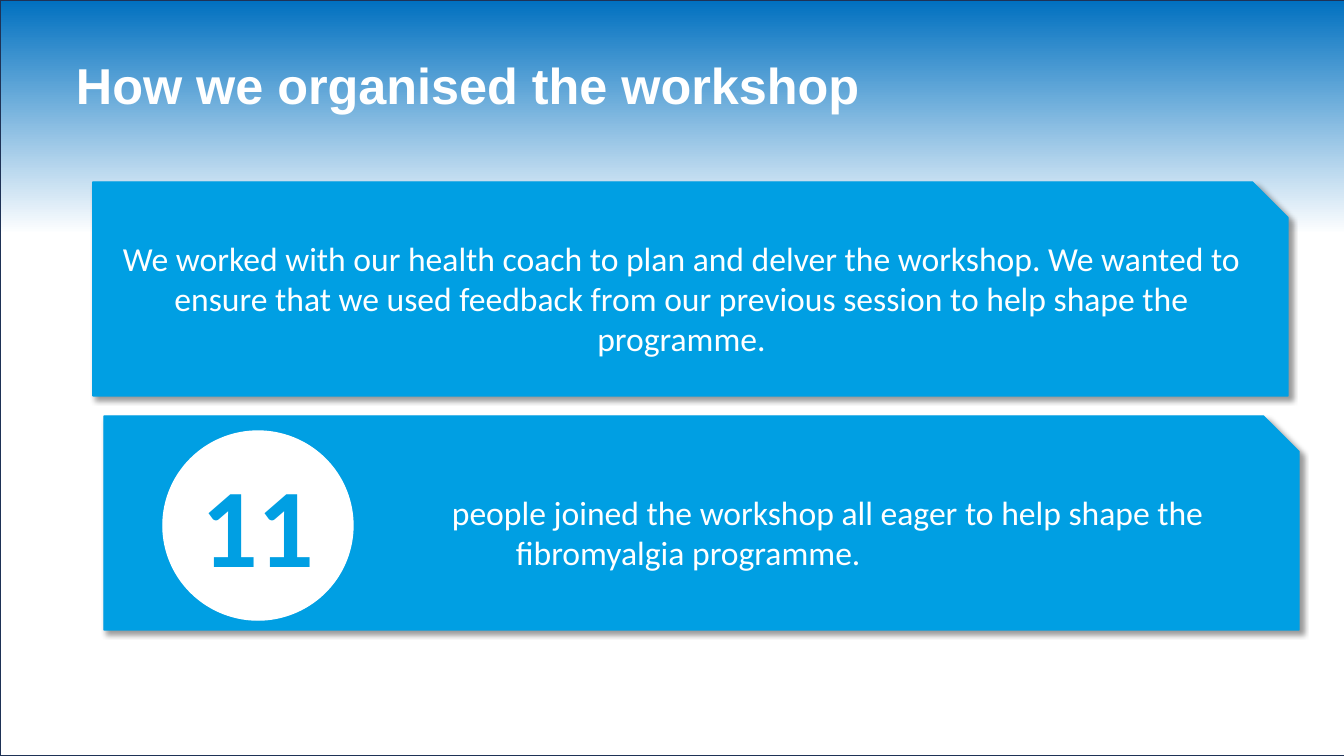
from lxml import etree
from pptx import Presentation
from pptx.dml.color import RGBColor
from pptx.enum.shapes import MSO_SHAPE
from pptx.enum.text import MSO_ANCHOR, PP_ALIGN
from pptx.oxml.ns import qn
from pptx.util import Pt

RECTANGLE, SNIPPED, OVAL = MSO_SHAPE.RECTANGLE, MSO_SHAPE.SNIP_1_RECTANGLE, MSO_SHAPE.OVAL
MIDDLE, TOP = MSO_ANCHOR.MIDDLE, MSO_ANCHOR.TOP
LEFT, CENTER = PP_ALIGN.LEFT, PP_ALIGN.CENTER

COLOURS = {"white": "FFFFFF", "sky": "009FE3", "deep": "0070C0", "navy": "1E3256", "shadow": "000000"}
SLIDE_SIZE = (1344, 756)
BACKDROP_BOX = (0, 0, 1380, 756)
BACKDROP_STOPS = [(0, "deep"), (0.31, "white")]

TITLE = "How we organised the workshop"
TITLE_BOX = (66, 15, 1289, 146)
PANEL_SIZE = (1195, 214)
# left, top, text, alignment, left indent, first-line indent
PANELS = [
    (93, 182, "We worked with our health coach to plan and delver the workshop. We wanted to "
              "ensure that we used feedback from our previous session to help shape the programme.",
     CENTER, 0, 0),
    (104, 416, "people joined the workshop all eager to help shape the fibromyalgia programme.",
     LEFT, 402, -64),
]
COUNT = "11"
COUNT_CIRCLE = (163, 431, 190, 189)
COUNT_BOX = (145, 451, 226, 146)

EMU_PER_PX = 914400 / 100.8


def px(length):
    return round(length * EMU_PER_PX)


def colour(name):
    return RGBColor.from_string(COLOURS[name])


def add_box(slide, kind, box, fill, line):
    shape = slide.shapes.add_shape(kind, *map(px, box))
    shape.shadow.inherit = False
    if fill:
        shape.fill.solid()
        shape.fill.fore_color.rgb = colour(fill)
    shape.line.color.rgb = colour(line)
    shape.line.width = Pt(1)
    return shape


def write(shape, text, size, font, ink, bold=False, align=LEFT, anchor=MIDDLE):
    frame = shape.text_frame
    frame.word_wrap = True
    frame.vertical_anchor = anchor
    paragraph = frame.paragraphs[0]
    paragraph.alignment = align
    run = paragraph.add_run()
    run.text = text
    run.font.size = Pt(size)
    run.font.name = font
    run.font.bold = bold
    run.font.color.rgb = colour(ink)
    return paragraph


def add_shadow(shape):
    """Cast a soft shadow towards the lower right."""
    effects = shape._element.spPr.find(qn("a:effectLst"))
    shadow = etree.SubElement(effects, qn("a:outerShdw"), blurRad=str(Pt(4)), dist=str(Pt(3)),
                              dir="2700000", algn="tl", rotWithShape="0")
    tint = etree.SubElement(shadow, qn("a:srgbClr"), val=COLOURS["shadow"])
    etree.SubElement(tint, qn("a:alpha"), val="40000")


def add_backdrop(slide):
    backdrop = add_box(slide, RECTANGLE, BACKDROP_BOX, None, "navy")
    backdrop.fill.gradient()
    backdrop.fill.gradient_angle = 270
    for stop, (position, name) in zip(backdrop.fill.gradient_stops, BACKDROP_STOPS):
        stop.position = position
        stop.color.rgb = colour(name)


def add_panel(slide, left, top, text, align, indent, first_line):
    panel = add_box(slide, SNIPPED, (left, top, *PANEL_SIZE), "sky", "sky")
    add_shadow(panel)
    paragraph = write(panel, text, 24, "Calibri", "white", align=align)
    if indent:
        properties = paragraph._p.get_or_add_pPr()
        properties.set("marL", str(px(indent)))
        properties.set("indent", str(px(first_line)))


def main():
    presentation = Presentation()
    presentation.slide_width, presentation.slide_height = map(px, SLIDE_SIZE)
    slide = presentation.slides.add_slide(presentation.slide_layouts[6])

    add_backdrop(slide)
    title = slide.shapes.add_textbox(*map(px, TITLE_BOX))
    write(title, TITLE, 36, "Arial", "white", bold=True).line_spacing = 0.9
    for panel in PANELS:
        add_panel(slide, *panel)
    add_box(slide, OVAL, COUNT_CIRCLE, "white", "white")
    count = slide.shapes.add_textbox(*map(px, COUNT_BOX))
    write(count, COUNT, 80, "Calibri", "sky", bold=True, align=CENTER, anchor=TOP)

    presentation.save("out.pptx")


if __name__ == "__main__":
    main()
